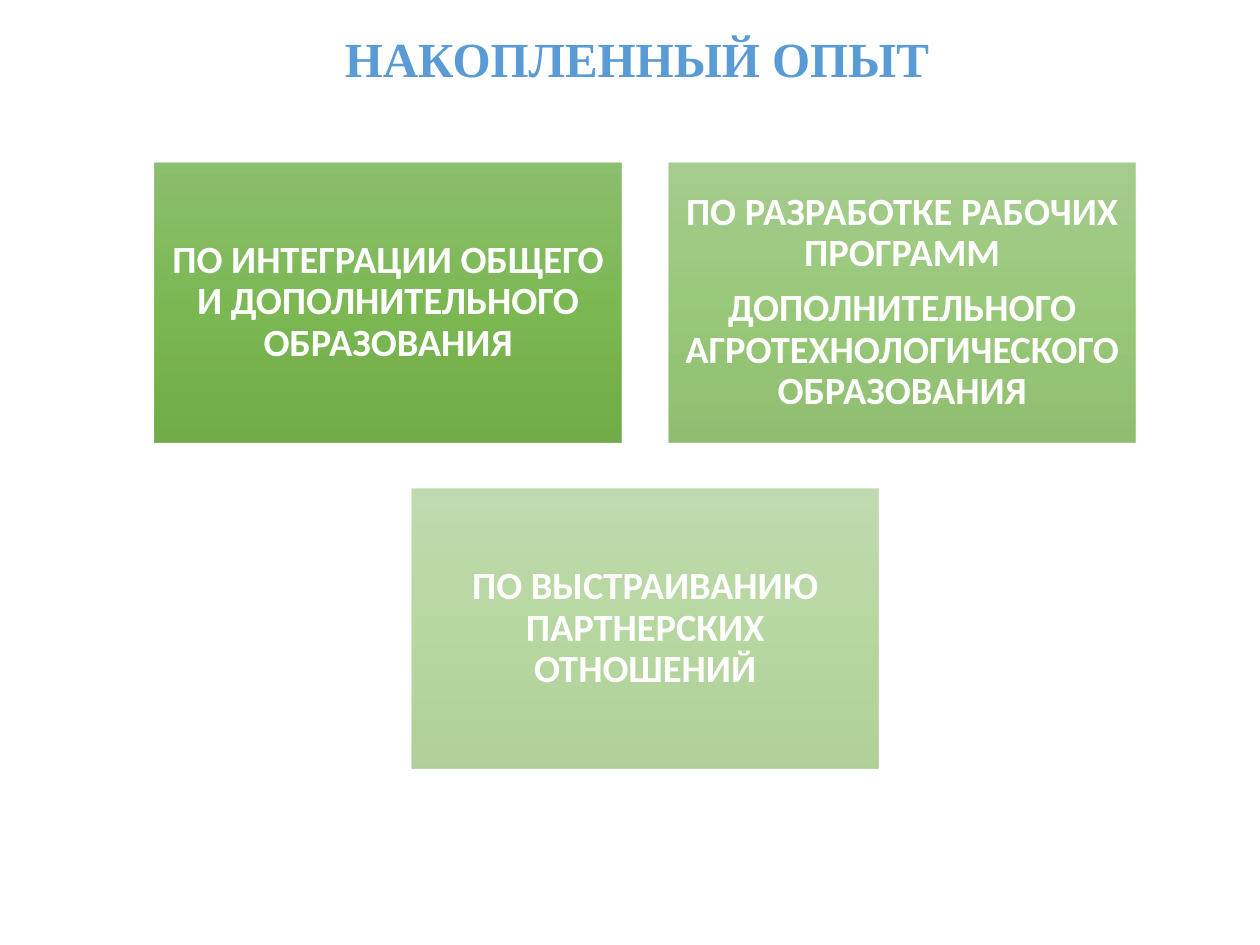
from lxml import etree
from pptx import Presentation
from pptx.dml.color import RGBColor
from pptx.enum.shapes import MSO_SHAPE
from pptx.enum.text import MSO_ANCHOR, MSO_AUTO_SIZE, PP_ALIGN
from pptx.oxml.ns import qn
from pptx.util import Inches, Pt

RECT = MSO_SHAPE.RECTANGLE
TOP, MIDDLE = MSO_ANCHOR.TOP, MSO_ANCHOR.MIDDLE
FIT, CENTER = MSO_AUTO_SIZE.SHAPE_TO_FIT_TEXT, PP_ALIGN.CENTER

# Content: rows of cards, each card a list of paragraphs
TITLE = "НАКОПЛЕННЫЙ ОПЫТ"
ROWS = [
    [["ПО ИНТЕГРАЦИИ ОБЩЕГО И ДОПОЛНИТЕЛЬНОГО ОБРАЗОВАНИЯ"],
     ["ПО РАЗРАБОТКЕ РАБОЧИХ ПРОГРАММ",
      "ДОПОЛНИТЕЛЬНОГО АГРОТЕХНОЛОГИЧЕСКОГО ОБРАЗОВАНИЯ"]],
    [["ПО ВЫСТРАИВАНИЮ ПАРТНЕРСКИХ ОТНОШЕНИЙ"]],
]

THEME = {
    "title": {"name": "Times New Roman", "size": Pt(28), "bold": True},
    "title_color": RGBColor.from_string("5B9BD5"),
    "card": {"name": "Calibri", "size": Pt(22), "bold": True},
    "card_color": RGBColor.from_string("FFFFFF"),
    "stops": [(0, "81B861"), (50, "6FB242"), (100, "62A336")],
    "alphas": [90, 70, 50],
}

# Card grid, in inches
MID, TOP_Y = 5.12, 1.29
WIDE, HIGH, GAP = 3.71, 2.22, 0.37
INSET = Inches(0.09)


def style(para, kind):
    para.alignment = CENTER
    for key, value in THEME[kind].items():
        setattr(para.font, key, value)
    para.font.color.rgb = THEME[kind + "_color"]


def shade(shape, alpha):
    """Fill with the green gradient, top to bottom, at alpha percent."""
    shape.fill.gradient()
    shape.fill.gradient_angle = 270
    stops = next(shape.element.iter(qn("a:gsLst")))
    for old in list(stops):
        stops.remove(old)
    for pos, color in THEME["stops"]:
        stop = etree.SubElement(stops, qn("a:gs"), pos=str(pos * 1000))
        rgb = etree.SubElement(stop, qn("a:srgbClr"), val=color)
        etree.SubElement(rgb, qn("a:alpha"), val=str(alpha * 1000))


def add_card(slide, left, top, lines, alpha):
    card = slide.shapes.add_shape(
        RECT, Inches(left), Inches(top), Inches(WIDE), Inches(HIGH))
    card.shadow.inherit = False
    card.line.fill.background()
    shade(card, alpha)
    frame = card.text_frame
    frame.word_wrap = True
    frame.vertical_anchor = MIDDLE
    for side in ("left", "top", "right", "bottom"):
        setattr(frame, "margin_" + side, INSET)
    for i, line in enumerate(lines):
        para = frame.add_paragraph() if i else frame.paragraphs[0]
        para.text = line
        para.line_spacing = 0.9
        para.space_before = Pt(7.7 if i else 0)
        style(para, "card")


def main():
    deck = Presentation()
    deck.slide_width, deck.slide_height = Inches(10), Inches(7.5)
    slide = deck.slides.add_slide(deck.slide_layouts[5])

    # Title
    title = slide.shapes.title
    title.left, title.top = Inches(2.61), Inches(0.18)
    title.width, title.height = Inches(4.89), Inches(0.57)
    frame = title.text_frame
    frame.text = TITLE
    frame.word_wrap = False
    frame.auto_size = FIT
    frame.vertical_anchor = TOP
    style(frame.paragraphs[0], "title")

    # Cards, each row centred, fading from first to last
    alphas = iter(THEME["alphas"])
    for r, row in enumerate(ROWS):
        span = len(row) * (WIDE + GAP) - GAP
        for c, lines in enumerate(row):
            left = MID - span / 2 + c * (WIDE + GAP)
            add_card(slide, left, TOP_Y + r * (HIGH + GAP), lines, next(alphas))

    deck.save("out.pptx")


if __name__ == "__main__":
    main()
